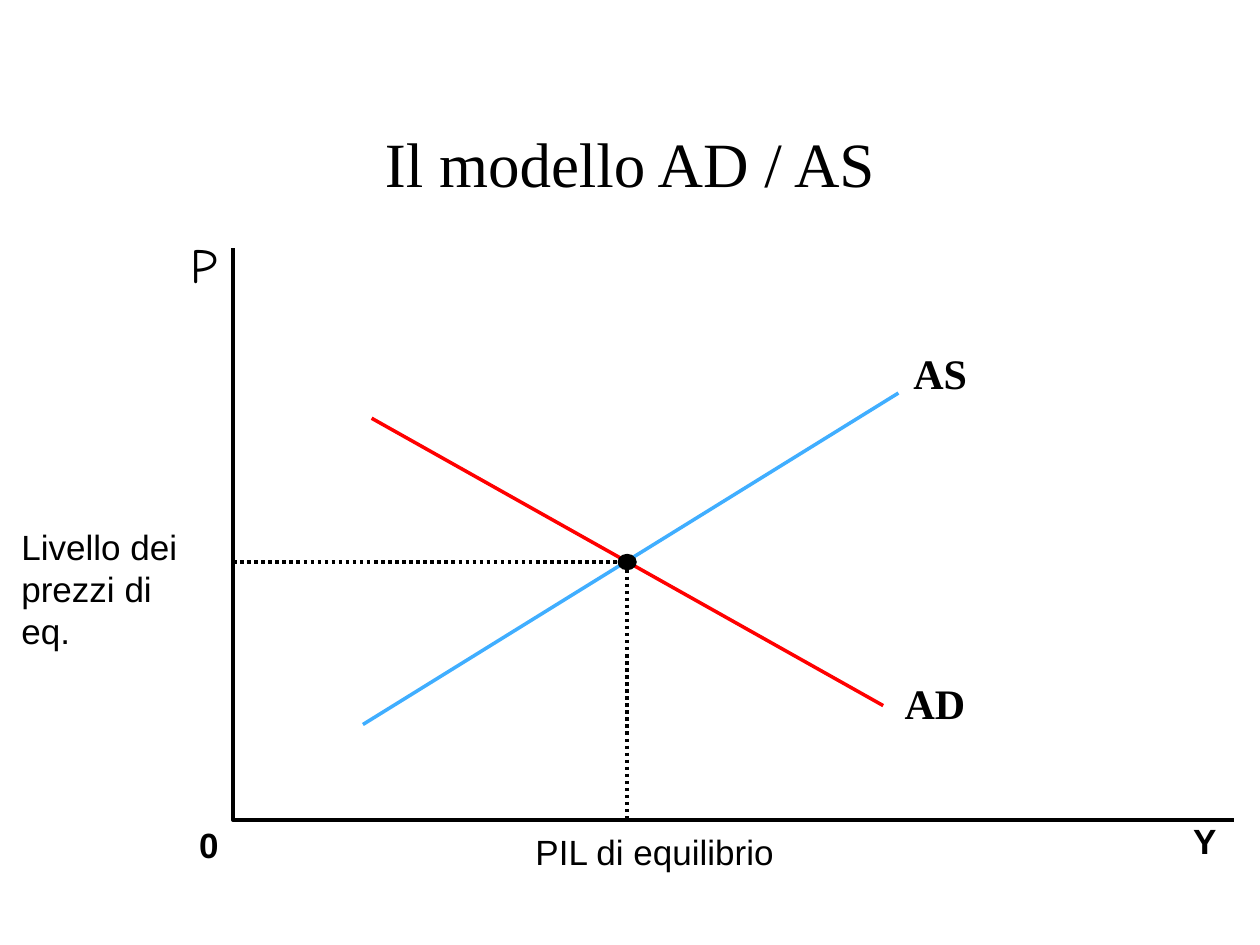
from dataclasses import dataclass

from lxml import etree
from pptx import Presentation
from pptx.dml.color import RGBColor
from pptx.enum import dml, shapes, text
from pptx.oxml.ns import qn
from pptx.util import Pt


@dataclass(frozen=True)
class Theme:
    ink: RGBColor = RGBColor(0, 0, 0)
    demand: RGBColor = RGBColor(255, 0, 0)
    supply: RGBColor = RGBColor(0x40, 0xAE, 0xFF)
    serif: str = "Times New Roman"
    sans: str = "Arial"
    hand: str = "Comic Neue"
    title: int = 36
    price: int = 28
    curve: int = 24
    label: int = 20
    line: int = 2


T = Theme()


def add_text(s, box, words, font, size, bold=False, wrap=False, inset=(0, 0)):
    tf = s.shapes.add_textbox(*map(Pt, box)).text_frame
    tf.word_wrap = wrap
    tf.margin_left = tf.margin_right = Pt(inset[0])
    tf.margin_top = tf.margin_bottom = Pt(inset[1])
    tf.text = words
    for p in tf.paragraphs:
        p.font.name, p.font.size, p.font.bold = font, Pt(size), bold
        p.font.color.rgb = T.ink
    return tf


def add_path(s, points, dash=None):
    start, *rest = [(Pt(x), Pt(y)) for x, y in points]
    builder = s.shapes.build_freeform(*start)
    builder.add_line_segments(rest, close=False)
    sp = builder.convert_to_shape()
    sp.shadow.inherit = False
    sp.fill.background()
    sp.line.color.rgb, sp.line.width = T.ink, Pt(T.line)
    if dash:
        sp.line.dash_style = dash


def add_curve(s, start, end, color):
    line = s.shapes.add_connector(
        shapes.MSO_CONNECTOR.STRAIGHT, *map(Pt, start + end))
    line.line.color.rgb, line.line.width = color, Pt(T.line)
    etree.SubElement(line._element.spPr, qn("a:effectLst"))


def add_title(s, box):
    tf = add_text(s, box, "Il modello AD / AS", T.serif, T.title,
                  wrap=True, inset=(7.2, 3.6))
    tf.vertical_anchor = text.MSO_ANCHOR.MIDDLE
    tf.paragraphs[0].alignment = text.PP_ALIGN.CENTER


def add_diagram(s, left, top, width, height):
    def at(x, y):
        return left + x, top + y

    eq_x, eq_y = 225.2, 179.4
    labels = [
        ((172.8, 332.6, 136.8, 24), "PIL di equilibrio", T.sans, T.label),
        ((548.6, 326.2, 14, 24), "Y", T.sans, T.label, True),
        ((-24.5, -7.9, 24.5, 34), "P", T.hand, T.price, False, True),
        ((-19.4, 329, 11, 24), "0", T.sans, T.label, True),
        ((-121, 158.4, 104, 72), "Livello dei\nprezzi di eq.",
         T.sans, T.label, False, True),
        ((381.6, 53.3, 46, 36), "AS", T.serif, T.curve, True, False, (7.2, 3.6)),
        ((376.6, 241.9, 49, 36), "AD", T.serif, T.curve, True, False, (7.2, 3.6)),
    ]
    for (x, y, w, h), *style in labels:
        add_text(s, (*at(x, y), w, h), *style)

    add_path(s, [at(0, 0), at(0, height), at(width, height)])
    add_path(s, [at(0, eq_y), at(eq_x, eq_y), at(eq_x, height)],
             dml.MSO_LINE.ROUND_DOT)
    add_curve(s, at(371.5, 261.4), at(79.2, 97.2), T.demand)
    add_curve(s, at(74.2, 272.2), at(380.2, 82.8), T.supply)

    w, h = 11, 9.4
    dot = s.shapes.add_shape(
        shapes.MSO_SHAPE.OVAL,
        *map(Pt, (*at(eq_x - w / 2, eq_y - h / 2), w, h)))
    dot.shadow.inherit = False
    dot.fill.solid()
    dot.fill.fore_color.rgb = T.ink
    dot.line.fill.background()


def main():
    prs = Presentation()
    prs.slide_width, prs.slide_height = Pt(720), Pt(540)
    s = prs.slides.add_slide(prs.slide_layouts[6])
    add_title(s, (54, 48, 612, 90))
    add_diagram(s, 133.2, 141.8, 571.7, 326.9)
    prs.save("out.pptx")


if __name__ == "__main__":
    main()
